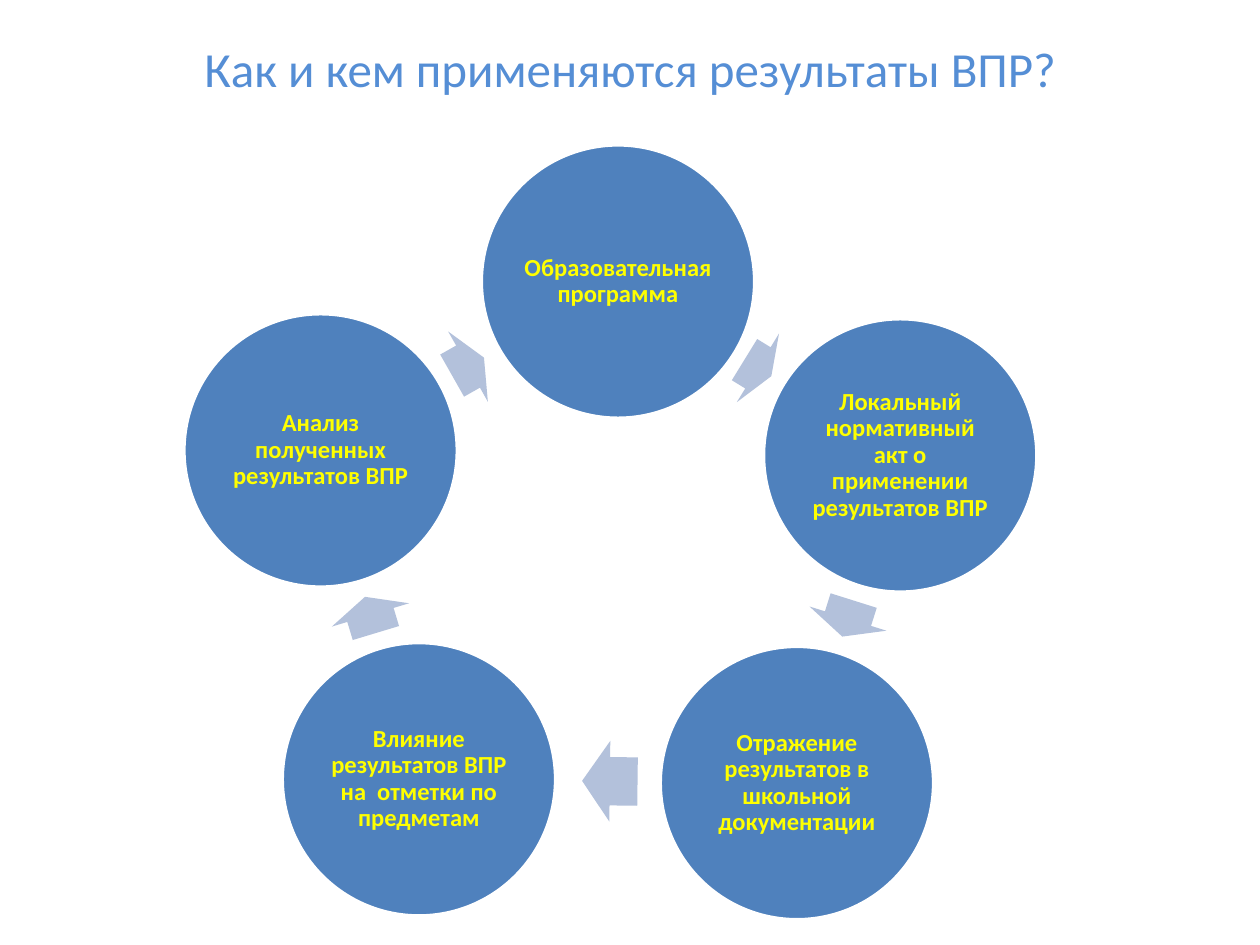
from pptx import Presentation
from pptx.dml.color import RGBColor
from pptx.enum.shapes import MSO_SHAPE
from pptx.enum.text import MSO_ANCHOR, MSO_AUTO_SIZE, PP_ALIGN
from pptx.util import Inches, Pt

OVAL, ARROW = MSO_SHAPE.OVAL, MSO_SHAPE.RIGHT_ARROW
CENTER, MIDDLE = PP_ALIGN.CENTER, MSO_ANCHOR.MIDDLE
COLORS = {"title": "558ED5", "circle": "4F81BD", "outline": "FFFFFF",
          "label": "FFFF00", "arrow": "B3C1DB"}
FONT = "Calibri"
DIAMETER = 2.17
ARROW_HEIGHT = 0.64
MARGIN = 0.02

# Each step: label, circle left and top, then the next arrow's left, top, width, rotation
STEPS = [
    ("Образовательная программа", 3.82, 1.15, 5.89, 2.6, 0.25, 31.6),
    ("Локальный нормативный акт о применении результатов ВПР",
     6.06, 2.53, 6.58, 4.59, 0.3, 107.5),
    ("Отражение результатов в школьной документации",
     5.24, 5.13, 4.62, 5.88, 0.44, 180.7),
    ("Влияние результатов ВПР на  отметки по предметам",
     2.24, 5.1, 2.79, 4.56, 0.3, 253.2),
    ("Анализ полученных результатов ВПР", 1.46, 2.49, 3.57, 2.59, 0.29, 330.5),
]


def add_filled_shape(kind, left, top, width, height, color):
    shape = slide.shapes.add_shape(
        kind, Inches(left), Inches(top), Inches(width), Inches(height))
    shape.shadow.inherit = False
    shape.fill.solid()
    shape.fill.fore_color.rgb = RGBColor.from_string(COLORS[color])
    return shape


def format_text(text_frame, size, color, bold):
    text_frame.word_wrap = True
    text_frame.auto_size = MSO_AUTO_SIZE.NONE
    text_frame.vertical_anchor = MIDDLE
    paragraph = text_frame.paragraphs[0]
    paragraph.alignment = CENTER
    paragraph.font.name = FONT
    paragraph.font.size = Pt(size)
    paragraph.font.bold = bold
    paragraph.font.color.rgb = RGBColor.from_string(COLORS[color])
    return paragraph


presentation = Presentation()
presentation.slide_width = Inches(10)
presentation.slide_height = Inches(7.5)
slide = presentation.slides.add_slide(presentation.slide_layouts[5])

# Title
title = slide.shapes.title
title.left, title.top = Inches(0), Inches(0.24)
title.width, title.height = Inches(10), Inches(0.6)
title.text_frame.text = "Как и кем применяются результаты ВПР?"
format_text(title.text_frame, 28, "title", False)

# Cycle of steps, each followed by an arrow to the next
for label, left, top, arrow_left, arrow_top, arrow_width, rotation in STEPS:
    circle = add_filled_shape(OVAL, left, top, DIAMETER, DIAMETER, "circle")
    circle.line.color.rgb = RGBColor.from_string(COLORS["outline"])
    circle.line.width = Pt(2)
    text_frame = circle.text_frame
    text_frame.margin_left = text_frame.margin_right = Inches(MARGIN)
    text_frame.margin_top = text_frame.margin_bottom = Inches(MARGIN)
    text_frame.text = label
    paragraph = format_text(text_frame, 14, "label", True)
    paragraph.line_spacing = 0.9

    arrow = add_filled_shape(
        ARROW, arrow_left, arrow_top, arrow_width, ARROW_HEIGHT, "arrow")
    arrow.line.fill.background()
    arrow.adjustments[0] = 0.6
    arrow.adjustments[1] = 0.5
    arrow.rotation = rotation

presentation.save("out.pptx")
